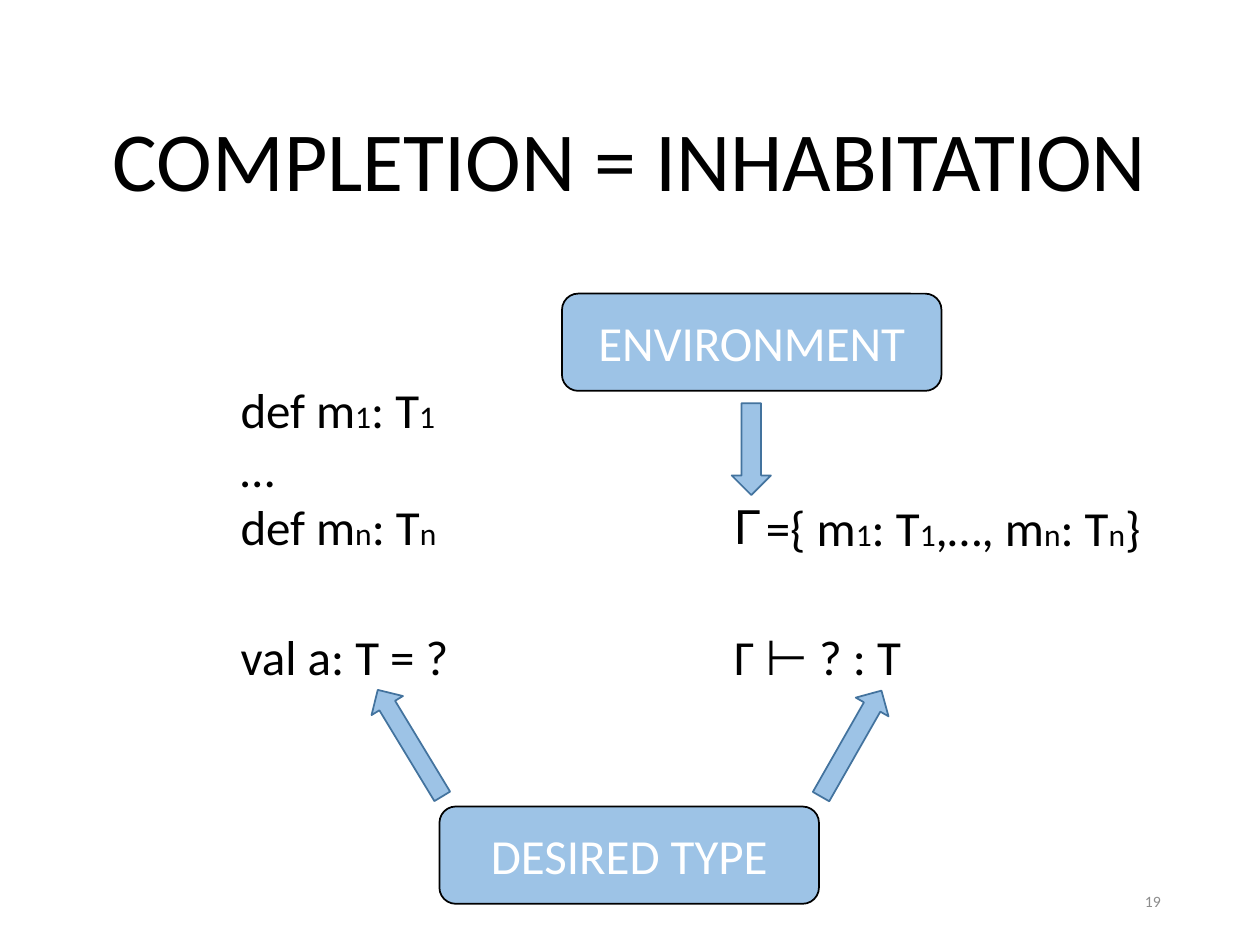
from lxml.etree import SubElement
from pptx import Presentation
from pptx.dml.color import RGBColor
from pptx.enum.shapes import MSO_SHAPE as Preset
from pptx.enum.text import MSO_ANCHOR as Anchor, PP_ALIGN as Align
from pptx.oxml.ns import qn
from pptx.util import Cm, Pt

FONT = "Calibri"
COLORS = {
    "text": "000000",
    "label": "FFFFFF",
    "fill": "9DC3E6",
    "box_line": "000000",
    "arrow_line": "43739E",
    "number": "8C8C8C",
}
BODY_SIZE, INDEX_SIZE = 28, 18
CODE_LEFT, LOGIC_LEFT = 4.6, 14.55


def color(name):
    return RGBColor.from_string(COLORS[name])


def write(para, text, size=BODY_SIZE, ink="text", align=Align.LEFT):
    """Fill a paragraph; every second part between bars is an index."""
    para.alignment = align
    para.font.name = FONT
    para.font.size = Pt(size)
    para.font.color.rgb = color(ink)
    for position, part in enumerate(text.split("|")):
        span = para.add_run()
        span.text = part
        if position % 2:
            span.font.size = Pt(INDEX_SIZE)


def add_text(page, place, lines, wrap=False, anchor=Anchor.TOP, **style):
    box = page.shapes.add_textbox(*map(Cm, place))
    frame = box.text_frame
    frame.word_wrap = wrap
    frame.vertical_anchor = anchor
    for index, line in enumerate(lines):
        para = frame.add_paragraph() if index else frame.paragraphs[0]
        write(para, line, **style)
    return frame.paragraphs[0]


def set_bullet(para, symbol, indent):
    props = para._p.get_or_add_pPr()
    props.set("marL", str(Cm(indent)))
    props.set("indent", str(-Cm(indent)))
    SubElement(props, qn("a:buFont")).set("typeface", "Arial")
    SubElement(props, qn("a:buChar")).set("char", symbol)


def add_preset(page, preset, place, line):
    shape = page.shapes.add_shape(preset, *map(Cm, place))
    shape.shadow.inherit = False
    shape.fill.solid()
    shape.fill.fore_color.rgb = color("fill")
    shape.line.color.rgb = color(line)
    shape.line.width = Pt(1)
    return shape


def add_label(page, left, top, text):
    shape = add_preset(page, Preset.ROUNDED_RECTANGLE, (left, top, 7.65, 1.96), "box_line")
    shape.text_frame.vertical_anchor = Anchor.MIDDLE
    write(shape.text_frame.paragraphs[0], text, ink="label", align=Align.CENTER)


def add_arrow(page, place, angle):
    add_preset(page, Preset.RIGHT_ARROW, place, "arrow_line").rotation = angle


def main():
    deck = Presentation()
    deck.slide_width, deck.slide_height = Cm(25.4), Cm(19.05)
    page = deck.slides.add_slide(deck.slide_layouts[6])

    # Title
    title = add_text(page, (0, 0, 25.4, 6.63), ["COMPLETION = INHABITATION"], wrap=True,
                     anchor=Anchor.MIDDLE, size=48, align=Align.CENTER)
    title.line_spacing = 0.9
    title.space_before = Pt(7.5)

    # Program on the left
    add_text(page, (CODE_LEFT, 7.52, 4.72, 3.84),
             ["def m|1|: T|1", "…", "def m|n|: T|n"])
    add_text(page, (CODE_LEFT, 12.5, 5.21, 1.45), ["val a: T = ?"])

    # Type judgement on the right
    environment = add_text(page, (LOGIC_LEFT, 9.91, 9.25, 1.45),
                           ["={ m|1|: T|1|,…, m|n|: T|n|}"], wrap=True)
    set_bullet(environment, "Γ", 0.64)
    add_text(page, (LOGIC_LEFT, 12.5, 3.91, 1.45), ["Γ ⊢ ? : T"])

    # Labels and the arrows that lead from them
    add_label(page, 8.86, 16.26, "DESIRED TYPE")
    add_arrow(page, (15.93, 14.61, 2.46, 0.76), 299.7)
    add_arrow(page, (7.01, 14.61, 2.51, 0.74), 238.8)
    add_label(page, 11.33, 5.92, "ENVIRONMENT")
    add_arrow(page, (14.22, 8.66, 1.85, 0.79), 90)

    # Page number
    add_text(page, (17.93, 17.65, 5.72, 1.02), ["19"], wrap=True, anchor=Anchor.MIDDLE,
             size=9, ink="number", align=Align.RIGHT)

    deck.save("out.pptx")


if __name__ == "__main__":
    main()
